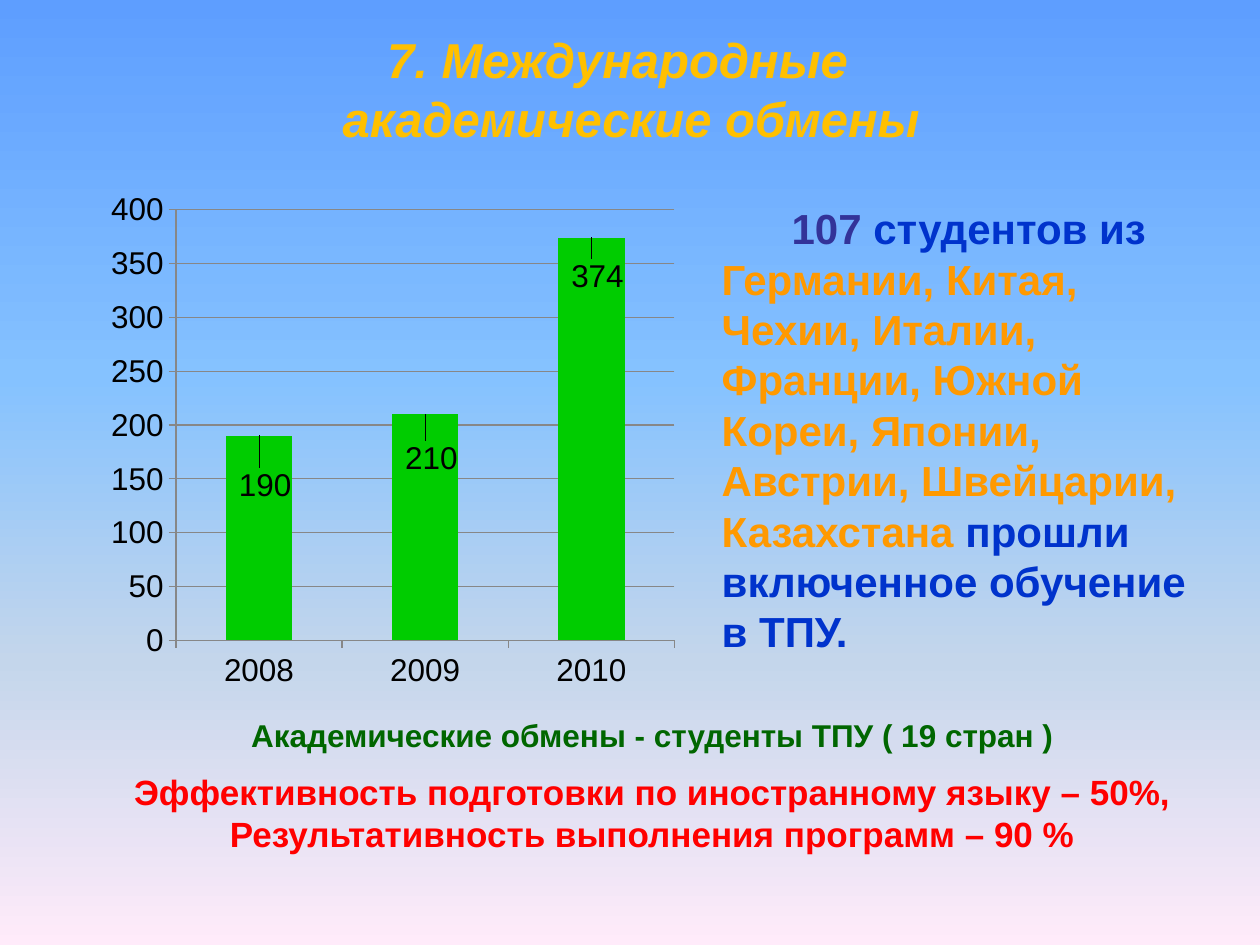
import pptx
import pptx.chart.data
import pptx.dml.color
import pptx.enum.chart
import pptx.enum.text
import pptx.oxml
import pptx.oxml.ns
import pptx.util
from pptx.util import Cm, Pt

COLORS = {
    "title": "FFC000", "number": "333399", "text": "0033CC",
    "countries": "FF9900", "caption": "006600", "result": "FF0000",
    "bar": "00CC00", "axis": "878787", "label": "000000",
}
SKY = [(0, "5E9EFF"), (40, "85C2FF"), (70, "C4D6EB"), (100, "FFEBFA")]
FONT = "Arial"


def rgb(name):
    return pptx.dml.color.RGBColor.from_string(COLORS[name])


def format_font(font, size, color, bold=True, italic=False):
    font.name, font.size = FONT, Pt(size)
    font.bold, font.italic = bold, italic
    font.color.rgb = rgb(color)


def write(paragraph, text, **style):
    """Append a run; a vertical tab in the text becomes a line break."""
    for number, line in enumerate(text.split("\v")):
        if number:
            paragraph.add_line_break()
        run = paragraph.add_run()
        run.text = line
        format_font(run.font, **style)


class SlideBuilder:
    def __init__(self, slide):
        self.slide = slide

    def background(self, stops):
        fill = self.slide.background.fill
        fill.gradient()
        fill.gradient_angle = 270
        stop_list = self.slide.element.find(".//" + pptx.oxml.ns.qn("a:gsLst"))
        for old_stop in list(stop_list):
            stop_list.remove(old_stop)
        for percent, color in stops:
            stop_list.append(pptx.oxml.parse_xml(
                f'<a:gs {pptx.oxml.ns.nsdecls("a")} pos="{percent * 1000}">'
                f'<a:srgbClr val="{color}"/></a:gs>'))

    def text(self, box, paragraphs, centered=True, middle=False, gap=0, indent=0):
        """Each paragraph is a list of (text, style) pairs."""
        frame = self.slide.shapes.add_textbox(*map(Cm, box)).text_frame
        frame.word_wrap = True
        if middle:
            frame.vertical_anchor = pptx.enum.text.MSO_ANCHOR.MIDDLE
        for number, runs in enumerate(paragraphs):
            paragraph = frame.add_paragraph() if number else frame.paragraphs[0]
            if number:
                paragraph.space_before = Pt(gap)
            if centered:
                paragraph.alignment = pptx.enum.text.PP_ALIGN.CENTER
            if indent:
                properties = paragraph._p.get_or_add_pPr()
                properties.set("marL", "0")
                properties.set("indent", str(Cm(indent)))
            for text, style in runs:
                write(paragraph, text, **style)

    def column_chart(self, box, years, students, plot, label_shifts):
        """plot is the inner area (x, y, w, h) as fractions of the chart."""
        data = pptx.chart.data.CategoryChartData()
        data.categories = years
        data.add_series("Series 1", students)
        chart = self.slide.shapes.add_chart(
            pptx.enum.chart.XL_CHART_TYPE.COLUMN_CLUSTERED, *map(Cm, box), data).chart
        chart.has_legend = chart.has_title = False
        format_font(chart.font, 18, "label", bold=False)
        columns = chart.plots[0]
        columns.gap_width = 150
        columns.vary_by_categories = False
        series = columns.series[0]
        series.format.fill.solid()
        series.format.fill.fore_color.rgb = rgb("bar")
        for number, shift in enumerate(label_shifts):
            self.point_label(series.points[number].data_label, shift)

        chart.value_axis.minimum_scale = 0
        chart.value_axis.maximum_scale = 400
        chart.value_axis.major_unit = 50
        chart.value_axis.has_major_gridlines = True
        for axis in (chart.category_axis, chart.value_axis):
            axis.major_tick_mark = pptx.enum.chart.XL_TICK_MARK.OUTSIDE
            self.thin_line(axis.format.line)
        self.thin_line(chart.value_axis.major_gridlines.format.line)
        plot_area = chart._chartSpace.chart.plotArea
        for old_layout in plot_area.findall(pptx.oxml.ns.qn("c:layout")):
            plot_area.remove(old_layout)
        plot_area.insert(0, self.layout(
            '<c:layoutTarget val="inner"/><c:xMode val="edge"/><c:yMode val="edge"/>',
            zip("xywh", plot)))

    def point_label(self, label, shift):
        label.position = pptx.enum.chart.XL_LABEL_POSITION.INSIDE_END
        format_font(label.font, 18, "label", bold=False)
        element = label._get_or_add_dLbl()
        element.insert(1, self.layout("", zip("xy", shift)))

    @staticmethod
    def layout(modes, values):
        sizes = "".join(f'<c:{key} val="{value}"/>' for key, value in values)
        return pptx.oxml.parse_xml(
            f'<c:layout {pptx.oxml.ns.nsdecls("c")}><c:manualLayout>'
            f'{modes}{sizes}</c:manualLayout></c:layout>')

    @staticmethod
    def thin_line(line):
        line.color.rgb = rgb("axis")
        line.width = Pt(0.75)


def main():
    presentation = pptx.Presentation()
    presentation.slide_width, presentation.slide_height = Cm(25.4), Cm(19.05)
    builder = SlideBuilder(presentation.slides.add_slide(presentation.slide_layouts[6]))
    builder.background(SKY)

    title = dict(size=28, color="title", italic=True)
    builder.text((3.76, 0.2, 17.65, 3.18),
                 [[("7. Международные \v академические обмены", title)]], middle=True)
    builder.column_chart((1.19, 3.58, 12.42, 10.85), ["2008", "2009", "2010"],
                         [190, 210, 374], plot=(0.19, 0.06, 0.81, 0.8),
                         label_shifts=[(0.01, 0.05), (0.01, 0.04), (0.01, 0.03)])
    blue = dict(size=24, color="text")
    builder.text((14.3, 3.96, 10.41, 11.02), [[
        ("107 ", dict(size=24, color="number")),
        ("студентов из ", blue),
        ("Германии, Китая, Чехии, Италии, Франции, Южной Кореи, Японии, "
         "Австрии, Швейцарии, Казахстана ", dict(size=24, color="countries")),
        ("прошли включенное обучение в ТПУ.", blue),
    ]], centered=False, indent=1.41)
    builder.text((1.4, 14.3, 23.5, 3.18), [
        [("Академические обмены - студенты ТПУ ( 19 стран )",
          dict(size=18, color="caption"))],
        [("Эффективность подготовки по иностранному языку – 50%, "
          "Результативность выполнения программ – 90 %",
          dict(size=20, color="result"))],
    ], gap=10)
    presentation.save("out.pptx")


if __name__ == "__main__":
    main()
